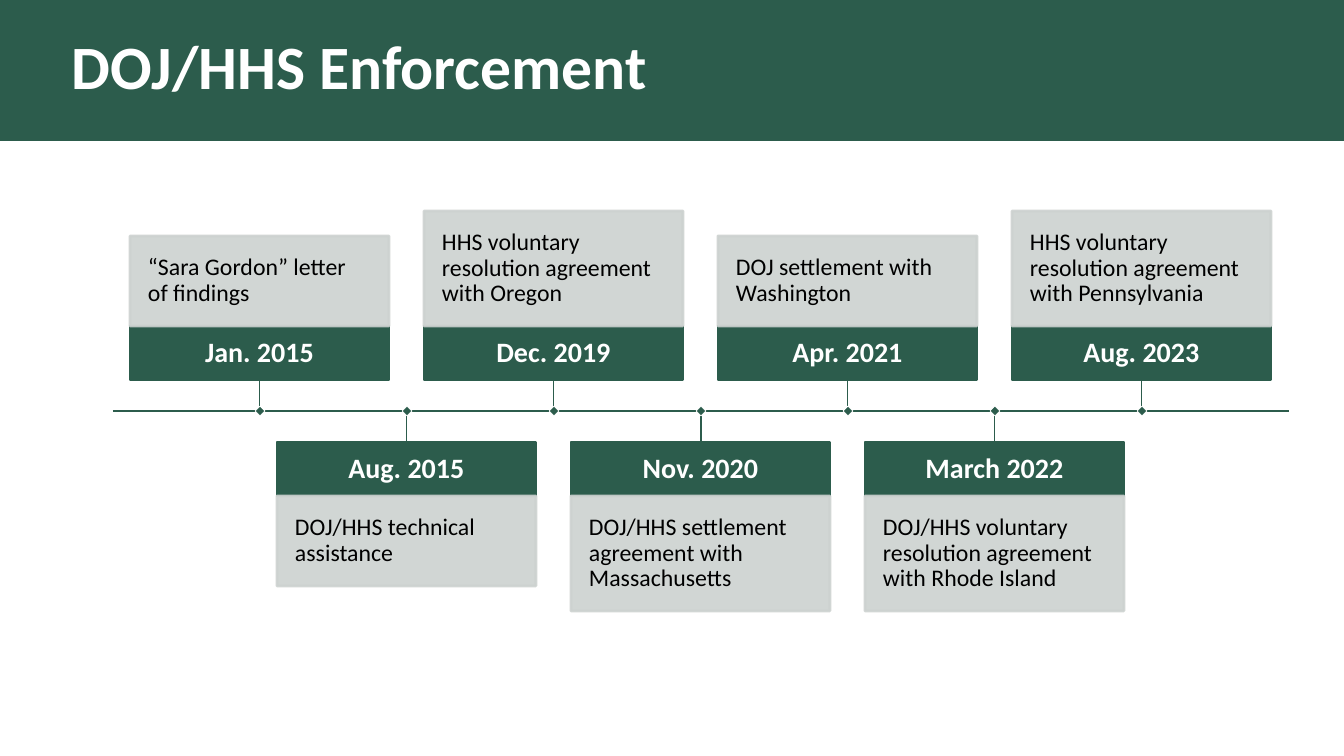
from dataclasses import dataclass

from lxml.etree import SubElement
from pptx import Presentation
from pptx.dml.color import RGBColor as RGB
from pptx.enum.shapes import MSO_CONNECTOR as CONNECTOR, MSO_SHAPE as SHAPE
from pptx.enum.text import MSO_ANCHOR as ANCHOR, PP_ALIGN as ALIGN
from pptx.oxml.ns import qn
from pptx.util import Emu, Pt


@dataclass(frozen=True)
class Theme:
    """Colours, font and type sizes of the slide."""
    green: RGB = RGB(0x2C, 0x5C, 0x4C)
    grey: RGB = RGB(0xCD, 0xD2, 0xD0)
    white: RGB = RGB(0xFF, 0xFF, 0xFF)
    black: RGB = RGB(0x00, 0x00, 0x00)
    font: str = "Calibri"
    title: int = 44
    date: int = 20
    body: int = 17


THEME = Theme()
EMU_PER_PX = 914400 / 100.8
AXIS_Y, AXIS_LEFT, AXIS_RIGHT = 411, 113, 1289
CARD_LEFT, CARD_STEP, CARD_W = 130, 147, 259
STEM, DATE_H, MARKER = 31, 54, 7
BODY_PAD, LINE_H = 40, 25

EVENTS = [
    ("Jan. 2015", "“Sara Gordon” letter of findings", 2),
    ("Aug. 2015", "DOJ/HHS technical assistance", 2),
    ("Dec. 2019", "HHS voluntary resolution agreement with Oregon", 3),
    ("Nov. 2020", "DOJ/HHS settlement agreement with Massachusetts", 3),
    ("Apr. 2021", "DOJ settlement with Washington", 2),
    ("March 2022", "DOJ/HHS voluntary resolution agreement with Rhode Island", 3),
    ("Aug. 2023", "HHS voluntary resolution agreement with Pennsylvania", 3),
]


def px(*values):
    """Turn whole pixels into EMU lengths."""
    return [Emu(round(v * EMU_PER_PX)) for v in values]


def set_text(s, text, size, color, bold=False, align=ALIGN.LEFT, inset=5, spacing=0.9):
    """Write one formatted paragraph into a shape."""
    tf = s.text_frame
    margin = px(inset)[0]
    frame = {"word_wrap": True, "vertical_anchor": ANCHOR.MIDDLE,
             "margin_left": margin, "margin_right": margin,
             "margin_top": margin, "margin_bottom": margin}
    for name, value in frame.items():
        setattr(tf, name, value)
    p = tf.paragraphs[0]
    p.alignment, p.line_spacing = align, spacing
    r = p.add_run()
    r.text = text
    for name, value in {"name": THEME.font, "size": Pt(size), "bold": bold}.items():
        setattr(r.font, name, value)
    r.font.color.rgb = color


def add_rect(shapes, box, fill, line=None, width=2, opacity=100):
    """Add a flat rectangle, optionally outlined and translucent."""
    s = shapes.add_shape(SHAPE.RECTANGLE, *px(*box))
    s.shadow.inherit = False
    s.fill.solid()
    s.fill.fore_color.rgb = fill
    if line is None:
        s.line.fill.background()
    else:
        s.line.color.rgb = line
        s.line.width = Pt(width)
    if opacity < 100:
        for color in s.element.spPr.iter(qn("a:srgbClr")):
            SubElement(color, qn("a:alpha"), val=str(opacity * 1000))
    return s


def add_line(shapes, start, end, width):
    """Add a straight green line without a shadow."""
    s = shapes.add_connector(CONNECTOR.STRAIGHT, *px(*start, *end))
    s.line.color.rgb = THEME.green
    s.line.width = Pt(width)
    SubElement(s.element.spPr, qn("a:effectLst"))


def add_title(slide, text):
    """Place the title over a full-width green band."""
    title = slide.shapes.title
    band = add_rect(slide.shapes, (-7, 0, 1358, 141), THEME.green)
    title.element.addprevious(band.element)
    title.left, title.top, title.width, title.height = px(67, 7, 1080, 126)
    set_text(title, text, THEME.title, THEME.white, bold=True)


def add_event(shapes, index, date, text, lines):
    """Add a dated card above or below the axis, with its stem and marker."""
    left = CARD_LEFT + index * CARD_STEP
    center = left + CARD_W // 2 + 1
    body_h = BODY_PAD + lines * LINE_H
    if index % 2 == 0:
        stem_y = AXIS_Y - STEM
        date_y = stem_y - DATE_H
        body_y = date_y - body_h
    else:
        stem_y = date_y = AXIS_Y + STEM
        body_y = date_y + DATE_H
    s = add_rect(shapes, (left, date_y, CARD_W, DATE_H), THEME.green, THEME.green)
    set_text(s, date, THEME.date, THEME.white, bold=True, align=ALIGN.CENTER, inset=11)
    s = add_rect(shapes, (left, body_y, CARD_W, body_h), THEME.grey, THEME.grey, opacity=90)
    set_text(s, text, THEME.body, THEME.black, inset=18)
    add_line(shapes, (center, min(stem_y, AXIS_Y)), (center, max(stem_y, AXIS_Y)), 0.75)
    corner = (center - MARKER / 2, AXIS_Y - MARKER / 2)
    s = add_rect(shapes, (*corner, MARKER, MARKER), THEME.green, THEME.white, width=0.5)
    s.rotation = 45


def main():
    """Build the enforcement timeline slide."""
    prs = Presentation()
    prs.slide_width, prs.slide_height = px(1344, 756)
    slide = prs.slides.add_slide(prs.slide_layouts[5])
    add_title(slide, "DOJ/HHS Enforcement")
    add_line(slide.shapes, (AXIS_LEFT, AXIS_Y), (AXIS_RIGHT, AXIS_Y), 2)
    for index, event in enumerate(EVENTS):
        add_event(slide.shapes, index, *event)
    prs.save("out.pptx")


if __name__ == "__main__":
    main()
